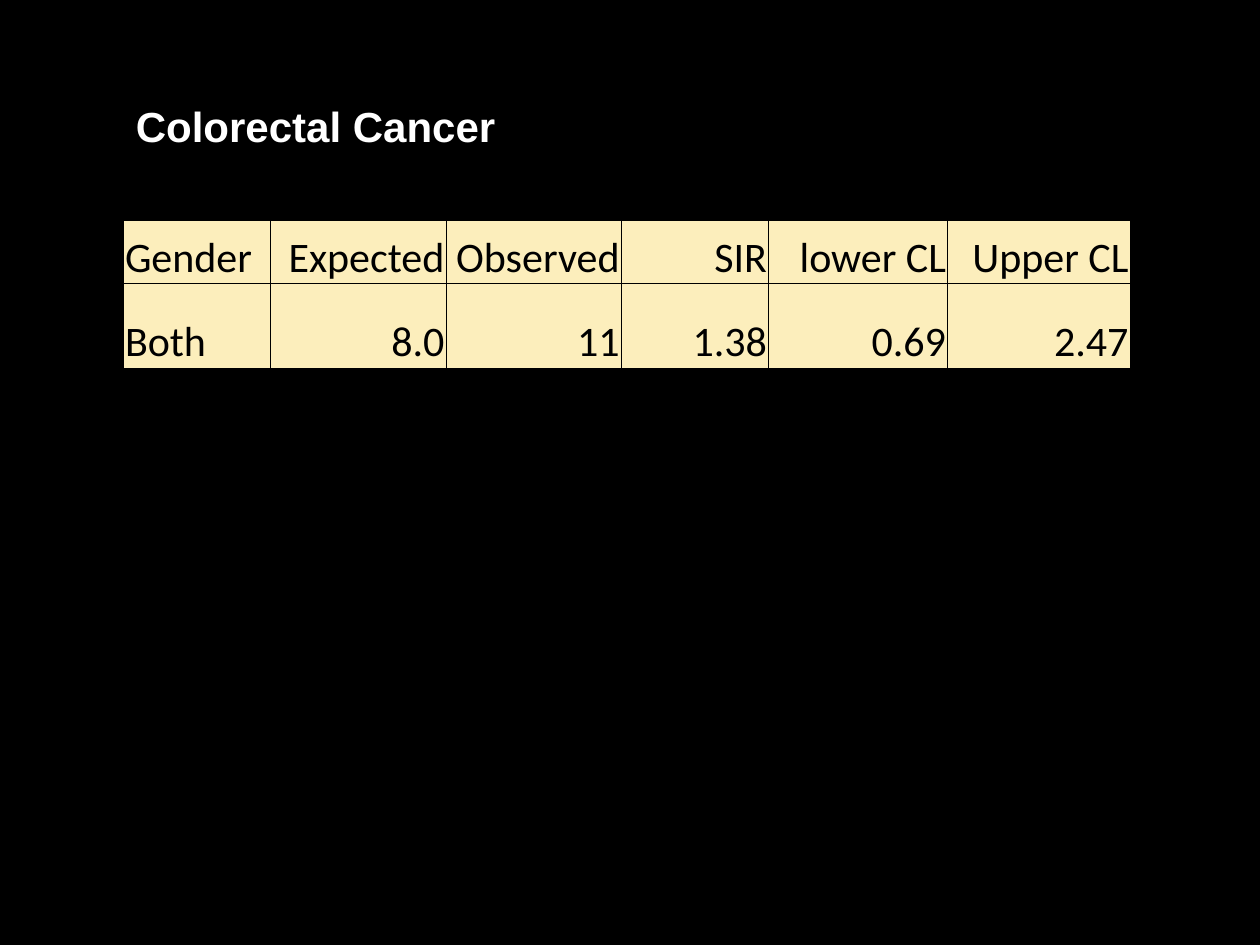
from dataclasses import dataclass

from lxml.etree import SubElement
from pptx import Presentation
from pptx.dml.color import RGBColor
from pptx.enum.text import MSO_ANCHOR as Anchor, MSO_AUTO_SIZE as AutoSize, PP_ALIGN as Align
from pptx.oxml.ns import qn
from pptx.util import Cm, Pt


@dataclass(frozen=True)
class Theme:
    background: str = "000000"
    title: str = "FFFFFF"
    ink: str = "000000"
    cell: str = "FCEEBC"
    border: str = "000000"
    border_width: float = 0.5
    text_size: int = 24
    title_font: str = "Arial"
    table_font: str = "Calibri"


THEME = Theme()
LEFT = Cm(2.49)
COLUMN_WIDTHS = (2.97, 3.53, 3.53, 2.97, 3.61, 3.68)
ROW_HEIGHTS = (1.27, 1.7)
ROWS = (
    ("Gender", "Expected", "Observed", "SIR", "lower CL", "Upper CL"),
    ("Both", "8.0", "11", "1.38", "0.69", "2.47"),
)


def write_text(frame, text, *, font, color, bold=False, align=Align.LEFT):
    paragraph = frame.paragraphs[0]
    paragraph.alignment = align
    run = paragraph.add_run()
    run.text = text
    run.font.name = font
    run.font.size = Pt(THEME.text_size)
    run.font.bold = bold
    run.font.color.rgb = RGBColor.from_string(color)


def add_title(slide, text):
    shape = slide.shapes.add_textbox(LEFT, Cm(1.9), Cm(9.58), Cm(1.28))
    frame = shape.text_frame
    frame.word_wrap = True
    frame.auto_size = AutoSize.SHAPE_TO_FIT_TEXT
    write_text(frame, text, font=THEME.title_font, color=THEME.title, bold=True)


def set_borders(cell):
    # Border elements must come before the cell's fill
    properties = cell._tc.get_or_add_tcPr()
    for side in ("a:lnL", "a:lnR", "a:lnT", "a:lnB"):
        line = SubElement(properties, qn(side), w=str(Pt(THEME.border_width)))
        fill = SubElement(line, qn("a:solidFill"))
        SubElement(fill, qn("a:srgbClr"), val=THEME.border)


def format_cell(cell, text, align):
    set_borders(cell)
    cell.fill.solid()
    cell.fill.fore_color.rgb = RGBColor.from_string(THEME.cell)
    cell.vertical_anchor = Anchor.BOTTOM
    cell.margin_left = cell.margin_right = cell.margin_top = Cm(0.03)
    cell.margin_bottom = 0
    write_text(cell.text_frame, text, font=THEME.table_font, color=THEME.ink, align=align)


def add_results_table(slide):
    table = slide.shapes.add_table(
        len(ROWS), len(COLUMN_WIDTHS), LEFT, Cm(4.45),
        Cm(sum(COLUMN_WIDTHS)), Cm(sum(ROW_HEIGHTS)),
    ).table
    table.horz_banding = False
    for column, width in zip(table.columns, COLUMN_WIDTHS):
        column.width = Cm(width)
    for row, height, values in zip(table.rows, ROW_HEIGHTS, ROWS):
        row.height = Cm(height)
        for index, (cell, value) in enumerate(zip(row.cells, values)):
            format_cell(cell, value, Align.RIGHT if index else Align.LEFT)


def main():
    presentation = Presentation()
    presentation.slide_width, presentation.slide_height = Cm(25.4), Cm(19.05)
    slide = presentation.slides.add_slide(presentation.slide_layouts[6])

    # Background
    background = slide.background.fill
    background.solid()
    background.fore_color.rgb = RGBColor.from_string(THEME.background)

    # Table and its heading
    add_results_table(slide)
    add_title(slide, "Colorectal Cancer")

    presentation.save("out.pptx")


if __name__ == "__main__":
    main()
